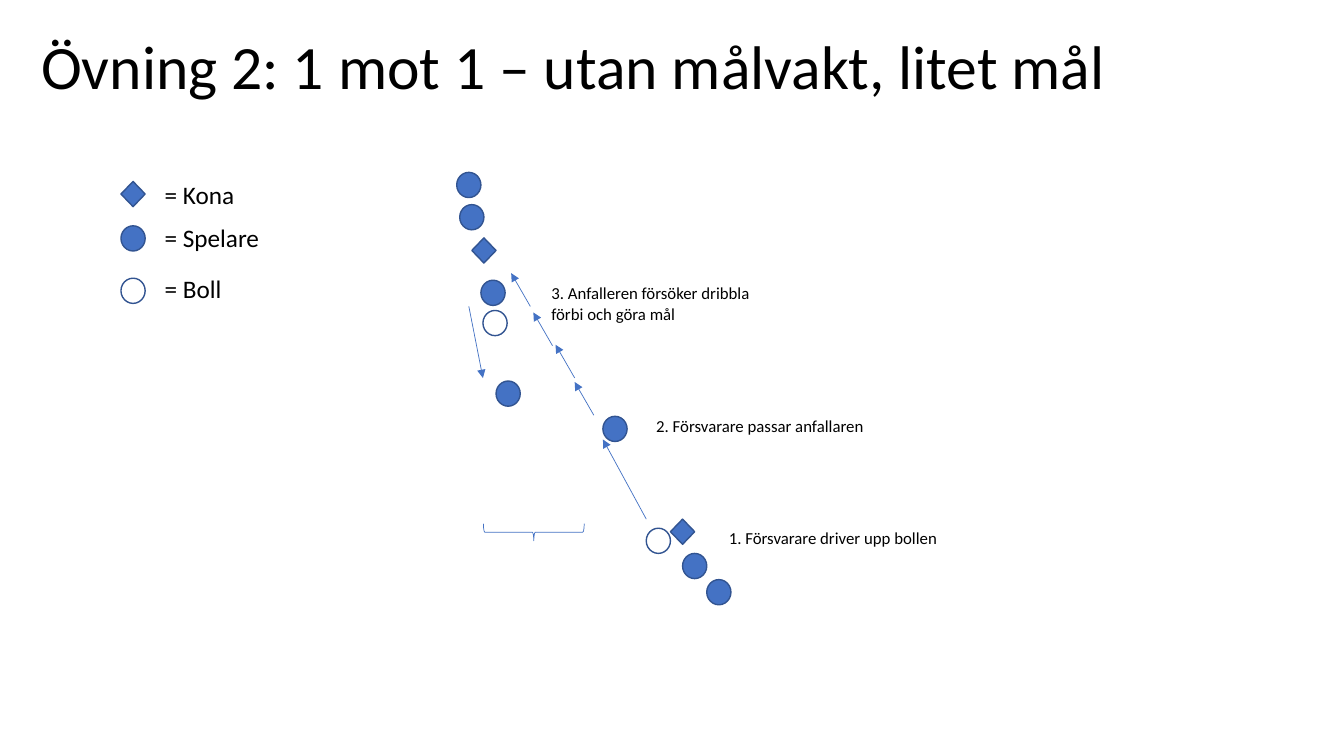
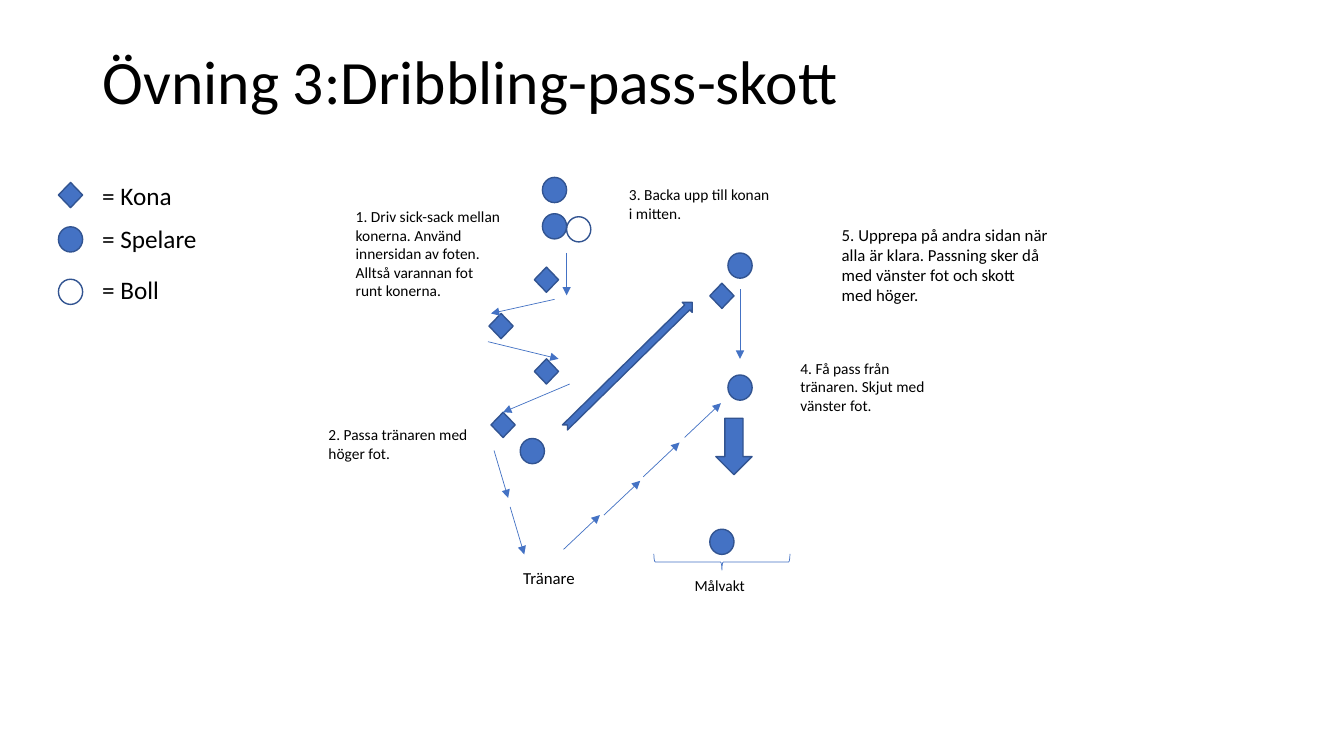
from dataclasses import dataclass

import lxml.etree
import pptx
import pptx.dml.color
import pptx.enum.shapes
import pptx.enum.text
import pptx.oxml.ns
import pptx.shapes.autoshape
import pptx.slide
import pptx.util

Inches = pptx.util.Inches
Pt = pptx.util.Pt
SHAPE = pptx.enum.shapes.MSO_SHAPE
ANCHOR = pptx.enum.text.MSO_ANCHOR
qn = pptx.oxml.ns.qn

# Shared look
FONT = "Calibri"
BLACK, WHITE, BLUE, EDGE = "000000", "FFFFFF", "4472C4", "325491"
MARK_W, MARK_H = 0.24, 0.25
Point = tuple[float, float]


@dataclass(frozen=True)
class Marker:
    geometry: SHAPE
    fill: str


CONE = Marker(SHAPE.DIAMOND, BLUE)
PLAYER = Marker(SHAPE.OVAL, BLUE)
BALL = Marker(SHAPE.OVAL, WHITE)


@dataclass(frozen=True)
class LegendRow:
    marker: Marker
    label: str
    mark_dy: float
    text_dy: float


LEGEND = [
    LegendRow(CONE, "= Kona", 0.07, 0),
    LegendRow(PLAYER, "= Spelare", 0.51, 0.43),
    LegendRow(BALL, "= Boll", 1.03, 0.93),
]


@dataclass(frozen=True)
class Label:
    x: float
    y: float
    w: float
    h: float
    text: str
    size: float = 11


@dataclass(frozen=True)
class Arrow:
    start: Point
    end: Point


@dataclass(frozen=True)
class Block:
    geometry: SHAPE
    x: float
    y: float
    w: float
    h: float
    rotation: float = 0


@dataclass(frozen=True)
class Drill:
    title: Label
    legend: Point
    goal: Block
    marks: list[tuple[Marker, list[Point]]]
    arrows: list[Arrow]
    blocks: list[Block]
    labels: list[Label]


def rgb(value: str) -> pptx.dml.color.RGBColor:
    return pptx.dml.color.RGBColor.from_string(value)


def chain(starts: list[Point], dx: float, dy: float) -> list[Arrow]:
    """Arrows of one length and direction, one from each start."""
    return [Arrow((x, y), (x + dx, y + dy)) for x, y in starts]


# Drawing
def add_text(s: pptx.slide.Slide, label: Label, anchor: ANCHOR = ANCHOR.TOP,
             spacing: float = 1.0) -> None:
    box = s.shapes.add_textbox(Inches(label.x), Inches(label.y),
                               Inches(label.w), Inches(label.h))
    tf = box.text_frame
    tf.word_wrap = True
    tf.vertical_anchor = anchor
    p = tf.paragraphs[0]
    p.line_spacing = spacing
    r = p.add_run()
    r.text = label.text
    r.font.name = FONT
    r.font.size = Pt(label.size)
    r.font.color.rgb = rgb(BLACK)


def add_block(s: pptx.slide.Slide, block: Block, fill: str = BLUE,
              edge: str = EDGE, width: float = 1) -> pptx.shapes.autoshape.Shape:
    sp = s.shapes.add_shape(block.geometry, Inches(block.x), Inches(block.y),
                            Inches(block.w), Inches(block.h))
    sp.rotation = block.rotation
    sp.shadow.inherit = False
    sp.fill.solid()
    sp.fill.fore_color.rgb = rgb(fill)
    sp.line.color.rgb = rgb(edge)
    sp.line.width = Pt(width)
    return sp


def add_marker(s: pptx.slide.Slide, marker: Marker, x: float, y: float) -> None:
    add_block(s, Block(marker.geometry, x, y, MARK_W, MARK_H), marker.fill)


def add_arrow(s: pptx.slide.Slide, arrow: Arrow) -> None:
    line = s.shapes.add_connector(
        pptx.enum.shapes.MSO_CONNECTOR.STRAIGHT,
        *(Inches(v) for v in arrow.start + arrow.end))
    line.line.color.rgb = rgb(BLUE)
    line.line.width = Pt(0.5)
    sp_pr = line._element.spPr
    lxml.etree.SubElement(sp_pr.find(qn("a:ln")), qn("a:tailEnd"), type="triangle")
    lxml.etree.SubElement(sp_pr, qn("a:effectLst"))


def add_legend(s: pptx.slide.Slide, x: float, y: float) -> None:
    for row in LEGEND:
        add_marker(s, row.marker, x, y + row.mark_dy)
        add_text(s, Label(x + 0.335, y + row.text_dy, 1.54, 0.4, row.label, 18))


def add_drill(prs: pptx.presentation.Presentation, drill: Drill) -> None:
    s = prs.slides.add_slide(prs.slide_layouts[6])
    add_text(s, drill.title, ANCHOR.MIDDLE, 0.9)
    add_legend(s, *drill.legend)
    add_block(s, drill.goal, edge=BLUE, width=0.5).fill.background()
    for marker, points in drill.marks:
        for x, y in points:
            add_marker(s, marker, x, y)
    for arrow in drill.arrows:
        add_arrow(s, arrow)
    for block in drill.blocks:
        add_block(s, block)
    for label in drill.labels:
        add_text(s, label)


# Drill content
ONE_ON_ONE = Drill(
    title=Label(0.31, 0.29, 11.5, 0.79,
                "Övning 2: 1 mot 1 – utan målvakt, litet mål", 44),
    legend=(1.2, 1.73),
    goal=Block(SHAPE.LEFT_BRACE, 5.21, 4.78, 0.17, 1, 270),
    marks=[
        (CONE, [(6.65, 5.15), (4.68, 2.36)]),
        (PLAYER, [(6.77, 5.49), (7.01, 5.75), (4.56, 2.03), (4.53, 1.71),
                  (5.98, 4.13), (4.77, 2.78), (4.92, 3.78)]),
        (BALL, [(6.41, 5.24), (4.79, 3.08)]),
    ],
    arrows=[
        Arrow((6.41, 5.15), (5.98, 4.36)),
        *chain([(5.89, 4.12), (5.7, 3.75), (5.48, 3.43), (5.26, 3.04)], -0.19, -0.33),
        Arrow((4.65, 3.04), (4.79, 3.75)),
    ],
    blocks=[],
    labels=[
        Label(7.13, 5.19, 2.31, 0.3, "1. Försvarare driver upp bollen", 12),
        Label(6.41, 4.08, 2.31, 0.3, "2. Försvarare passar anfallaren", 12),
        Label(5.37, 2.76, 2.31, 0.5,
              "3. Anfalleren försöker dribbla förbi och göra mål", 12),
    ],
)

DRIBBLE_PASS_SHOOT = Drill(
    title=Label(0.92, 0.4, 11.5, 0.87, "Övning 3:Dribbling-pass-skott", 44),
    legend=(0.58, 1.74),
    goal=Block(SHAPE.LEFT_BRACE, 7.08, 4.9, 0.16, 1.35, 270),
    marks=[
        (CONE, [(5.3, 2.65), (4.85, 3.11), (5.3, 3.56), (4.87, 4.09), (7.04, 2.81)]),
        (PLAYER, [(5.38, 2.12), (5.38, 1.76), (7.04, 5.25), (5.16, 4.35),
                  (7.22, 2.51), (7.22, 3.72)]),
        (BALL, [(5.62, 2.15)]),
    ],
    arrows=[
        Arrow((5.62, 2.51), (5.62, 2.93)),
        Arrow((5.5, 2.97), (4.87, 3.11)),
        Arrow((4.84, 3.39), (5.54, 3.56)),
        Arrow((5.65, 3.81), (4.99, 4.09)),
        *chain([(4.9, 4.47), (5.06, 5.03)], 0.14, 0.47),
        *chain([(5.59, 5.45), (5.99, 5.11), (6.38, 4.73), (6.79, 4.34)], 0.36, -0.34),
        Arrow((7.34, 2.87), (7.34, 3.56)),
    ],
    blocks=[
        Block(SHAPE.DOWN_ARROW, 7.1, 4.15, 0.36, 0.56),
        Block(SHAPE.NOTCHED_RIGHT_ARROW, 5.35, 3.55, 1.77, 0.14, 315.5),
    ],
    labels=[
        Label(5.09, 5.58, 0.88, 0.3, "Tränare", 12),
        Label(3.43, 2.01, 1.66, 1.03,
              "1. Driv sick-sack mellan konerna. Använd innersidan av foten. "
              "Alltså varannan fot runt konerna."),
        Label(3.16, 4.17, 1.66, 0.47, "2. Passa tränaren med höger fot."),
        Label(6.14, 1.79, 1.66, 0.47, "3. Backa upp till konan i mitten."),
        Label(7.84, 3.51, 1.66, 0.66,
              "4. Få pass från tränaren. Skjut med vänster fot."),
        Label(6.79, 5.67, 1.66, 0.29, "Målvakt"),
        Label(8.25, 2.18, 2.25, 0.91,
              "5. Upprepa på andra sidan när alla är klara. Passning sker då "
              "med vänster fot och skott med höger.", 12),
    ],
)


def main() -> None:
    prs = pptx.Presentation()
    prs.slide_width = Inches(13.33)
    prs.slide_height = Inches(7.5)
    for drill in (ONE_ON_ONE, DRIBBLE_PASS_SHOOT):
        add_drill(prs, drill)
    prs.save("out.pptx")


if __name__ == "__main__":
    main()
